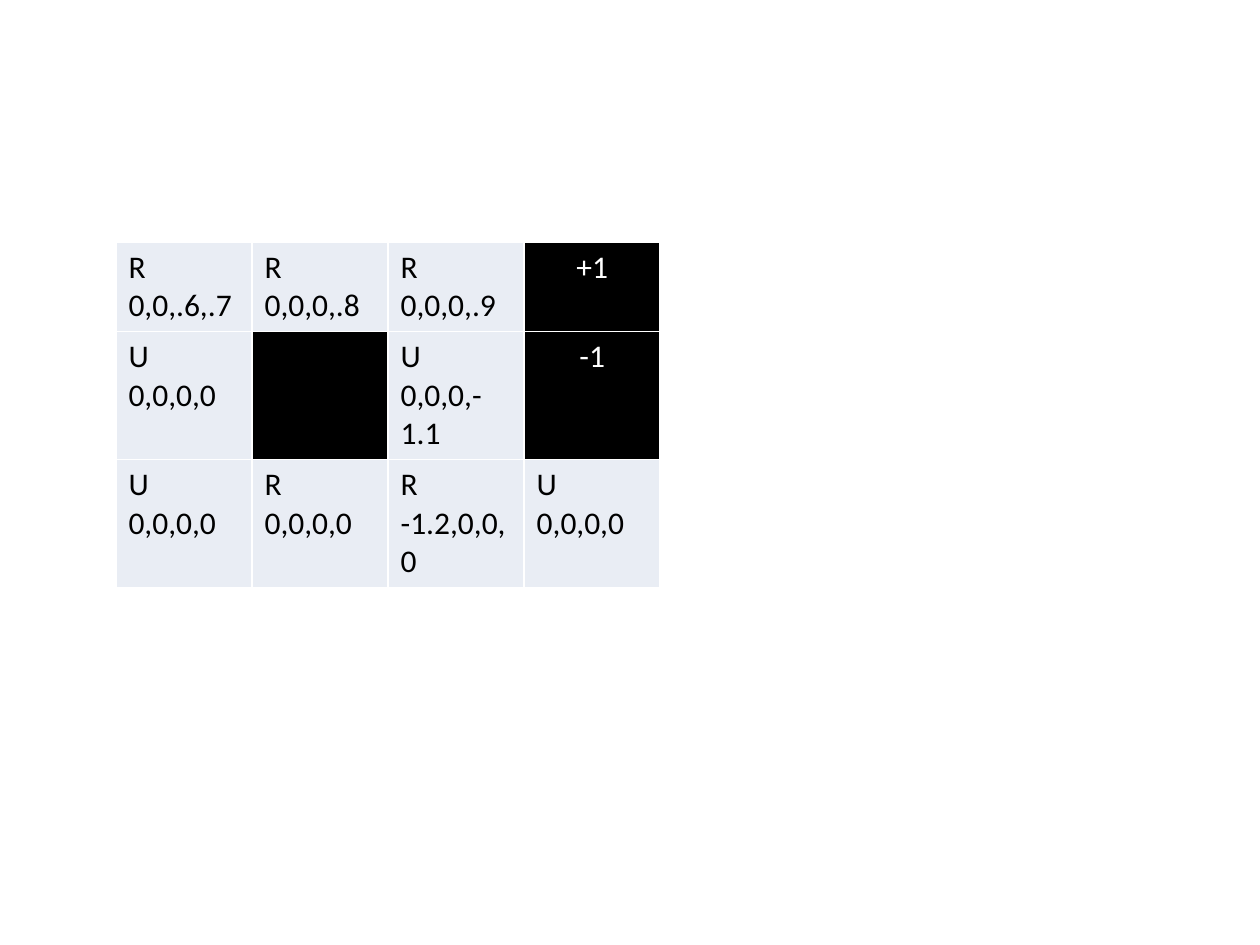
from lxml import etree
from pptx import Presentation
from pptx.dml.color import RGBColor
from pptx.enum import text
from pptx.oxml import ns
from pptx.util import Inches, Pt

LIGHT, BLACK, WHITE = "E9EDF4", "000000", "FFFFFF"
LEFT, TOP, COLUMN_WIDTH, ROW_HEIGHT = 0.92, 1.92, 1.08, 0.36

GRID = [
    [["R", "0,0,.6,.7"], ["R", "0,0,0,.8"], ["R", "0,0,0,.9"], ["+1"]],
    [["U 0,0,0,0"], [], ["U", "0,0,0,-1.1"], ["-1"]],
    [["U 0,0,0,0"], ["R", "0,0,0,0"], ["R", "-1.2,0,0,0"], ["U 0,0,0,0"]],
]
DARK_CELLS = {(0, 3), (1, 1), (1, 3)}


def color(value):
    return RGBColor.from_string(value)


def write(frame, lines, ink=BLACK, size=18, font="Calibri", align=None):
    for index, line in enumerate(lines):
        para = frame.paragraphs[0] if index == 0 else frame.add_paragraph()
        para.alignment = align
        span = para.add_run()
        span.text = line
        span.font.size = Pt(size)
        span.font.name = font
        span.font.color.rgb = color(ink)


def add_borders(cell, ink=WHITE, width=1):
    properties = cell._tc.get_or_add_tcPr()
    for index, side in enumerate(("lnL", "lnR", "lnT", "lnB")):
        line = etree.Element(ns.qn(f"a:{side}"), w=str(Pt(width)))
        fill = etree.SubElement(line, ns.qn("a:solidFill"))
        etree.SubElement(fill, ns.qn("a:srgbClr"), val=ink)
        properties.insert(index, line)


def main():
    deck = Presentation()
    deck.slide_width, deck.slide_height = Inches(10), Inches(7.5)
    slide = deck.slides.add_slide(deck.slide_layouts[6])
    rows, columns = len(GRID), len(GRID[0])
    table = slide.shapes.add_table(
        rows, columns, Inches(LEFT), Inches(TOP),
        Inches(columns * COLUMN_WIDTH), Inches(rows * ROW_HEIGHT),
    ).table
    table.first_row = table.horz_banding = False

    for row, states in enumerate(GRID):
        for column, lines in enumerate(states):
            dark = (row, column) in DARK_CELLS
            cell = table.cell(row, column)
            cell.fill.solid()
            cell.fill.fore_color.rgb = color(BLACK if dark else LIGHT)
            add_borders(cell)
            write(cell.text_frame, lines, ink=WHITE if dark else BLACK,
                  align=text.PP_ALIGN.CENTER if dark else None)

    deck.save("out.pptx")


if __name__ == "__main__":
    main()
